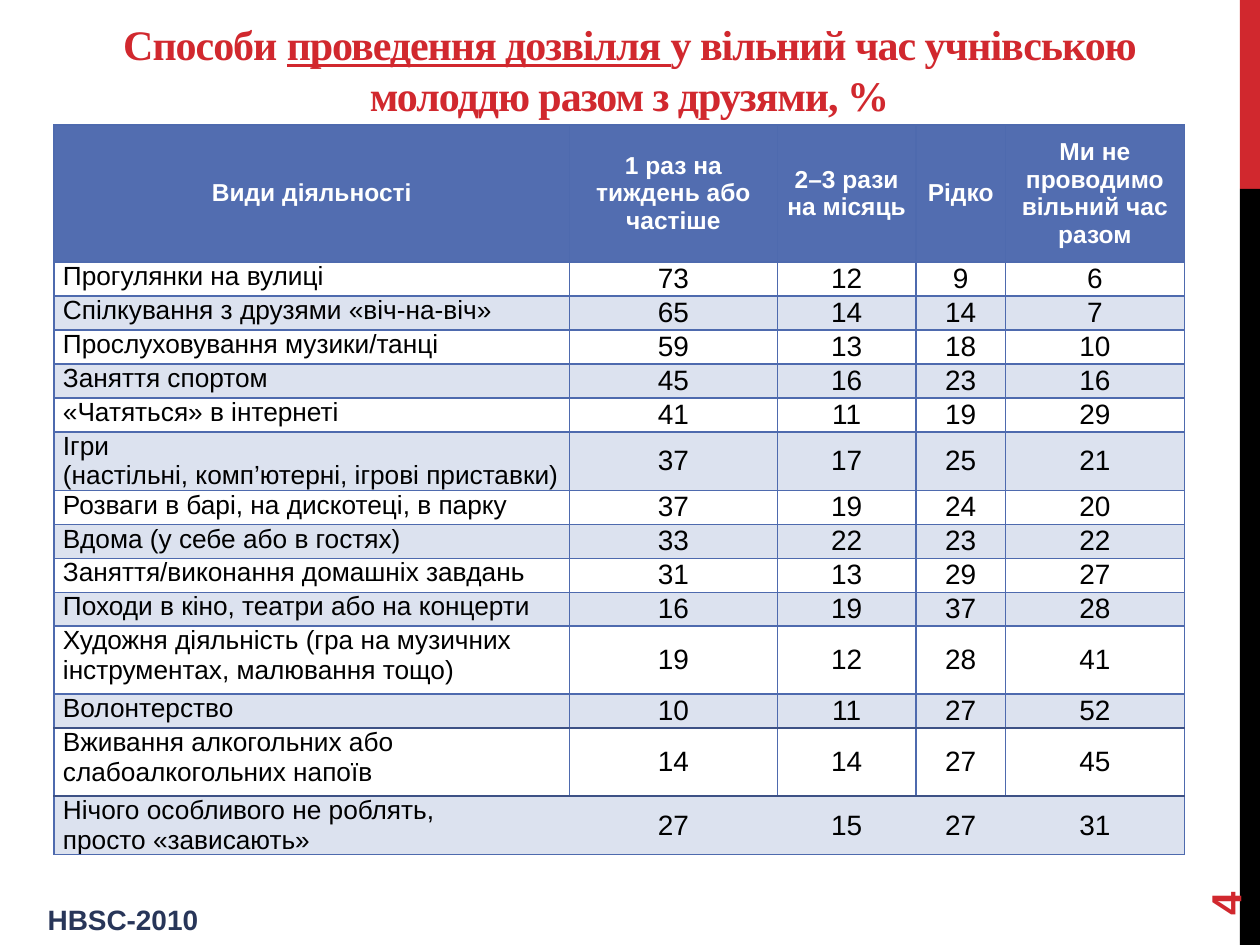
from lxml.etree import SubElement
from pptx import Presentation
from pptx.dml.color import RGBColor
from pptx.enum.shapes import MSO_SHAPE
from pptx.enum.text import MSO_ANCHOR, MSO_AUTO_SIZE, PP_ALIGN
from pptx.oxml.ns import qn
from pptx.util import Inches, Pt

WIDE, HIGH = Inches(10), Inches(7.5)
RED, BLACK, WHITE, NAVY = "D1282E", "000000", "FFFFFF", "283659"
BLUE, PALE, LINE, DARK = "526DB0", "DCE2EF", "4E6AAE", "3D5185"

TITLE = [
    ("Способи ", False),
    ("проведення дозвілля ", True),
    ("у вільний час учнівською молоддю разом з друзями, %", False),
]
HEAD = ["Види діяльності", "1 раз на тиждень або частіше", "2–3 рази на місяць",
        "Рідко", "Ми не проводимо вільний час разом"]
ROWS = [
    ("Прогулянки на вулиці", 73, 12, 9, 6),
    ("Спілкування з друзями «віч-на-віч»", 65, 14, 14, 7),
    ("Прослуховування музики/танці", 59, 13, 18, 10),
    ("Заняття спортом", 45, 16, 23, 16),
    ("«Чатяться» в інтернеті", 41, 11, 19, 29),
    ("Ігри\n(настільні, комп’ютерні, ігрові приставки)", 37, 17, 25, 21),
    ("Розваги в барі, на дискотеці, в парку", 37, 19, 24, 20),
    ("Вдома (у себе або в гостях)", 33, 22, 23, 22),
    ("Заняття/виконання домашніх завдань", 31, 13, 29, 27),
    ("Походи в кіно, театри або на концерти", 16, 19, 37, 28),
    ("Художня діяльність (гра на музичних інструментах, малювання тощо)",
     19, 12, 28, 41),
    ("Волонтерство", 10, 11, 27, 52),
    ("Вживання алкогольних або слабоалкогольних напоїв", 14, 14, 27, 45),
    ("Нічого особливого не роблять,\nпросто «зависають»", 27, 15, 27, 31),
]
LAST = len(ROWS)
COLS = [40.9, 16.5, 11, 7.1, 14.2]
HEAD_ROW, ROW = 14.53, 3.6
TALL = (11, 13)


def color(code):
    return RGBColor.from_string(code)


def across(share):
    """Percent of the slide's width."""
    return int(WIDE * share / 100)


def down(share):
    """Percent of the slide's height."""
    return int(HIGH * share / 100)


def box(left, top, width, height):
    return across(left), down(top), across(width), down(height)


def style(frame, size, code, bold=False, align=PP_ALIGN.LEFT, face="Arial"):
    for para in frame.paragraphs:
        para.alignment = align
        for run in para.runs:
            font = run.font
            font.name, font.size, font.bold = face, Pt(size), bold
            font.color.rgb = color(code)


def add_bar(slide, top, height, code):
    bar = slide.shapes.add_shape(MSO_SHAPE.RECTANGLE, *box(98.4, top, 1.6, height))
    bar.shadow.inherit = False
    bar.fill.solid()
    bar.fill.fore_color.rgb = color(code)
    bar.line.fill.background()


def add_label(slide, text, place, size, code):
    label = slide.shapes.add_textbox(*place)
    frame = label.text_frame
    frame.word_wrap = True
    frame.text = text
    style(frame, size, code, bold=True)
    return label


def set_title(slide):
    title = slide.shapes.title
    title.left, title.top, title.width, title.height = box(5, 2.27, 89.9, 11.07)
    frame = title.text_frame
    frame.auto_size = MSO_AUTO_SIZE.NONE
    frame.vertical_anchor = MSO_ANCHOR.BOTTOM
    for text, under in TITLE:
        run = frame.paragraphs[0].add_run()
        run.text = text
        run.font.underline = under
        run.font._element.set("spc", "-60")
    style(frame, 24, RED, True, PP_ALIGN.CENTER, "Times New Roman")


def set_edges(cell, edges):
    """Draw 1 pt borders; they must come before the fill in the cell's XML."""
    props = cell._tc.get_or_add_tcPr()
    for spot, (side, code) in enumerate(edges.items()):
        line = SubElement(props, qn(f"a:ln{side}"), w=str(Pt(1)))
        if code:
            fill = SubElement(line, qn("a:solidFill"))
            SubElement(fill, qn("a:srgbClr"), val=code)
        else:
            SubElement(line, qn("a:noFill"))
        props.insert(spot, line)


def edges_of(row, col):
    inner = None if row == LAST else LINE
    return {
        "L": LINE if col == 0 else inner,
        "R": LINE if col == len(COLS) - 1 else inner,
        "T": DARK if row >= LAST - 1 else LINE,
        "B": DARK if LAST - 2 <= row < LAST else LINE,
    }


def fill_cell(cell, row, col, text):
    frame = cell.text_frame
    frame.text = str(text)
    cell.margin_left = cell.margin_right = Inches(0.07)
    cell.margin_top = cell.margin_bottom = 0
    name = row > 0 and col == 0
    cell.vertical_anchor = MSO_ANCHOR.TOP if name else MSO_ANCHOR.MIDDLE
    if row == 0:
        style(frame, 14, WHITE, True, PP_ALIGN.CENTER)
    elif name:
        style(frame, 15, BLACK)
    else:
        style(frame, 16, BLACK, align=PP_ALIGN.CENTER)
    if row % 2 and row:
        cell.fill.background()
    else:
        cell.fill.solid()
        cell.fill.fore_color.rgb = color(PALE if row else BLUE)
    set_edges(cell, edges_of(row, col))


def add_grid(slide):
    data = [HEAD, *ROWS]
    place = box(4.3, 13.2, sum(COLS), HEAD_ROW + ROW * (LAST + len(TALL)))
    table = slide.shapes.add_table(len(data), len(COLS), *place).table
    for col, share in zip(table.columns, COLS):
        col.width = across(share)
    for row, texts in enumerate(data):
        share = HEAD_ROW if row == 0 else ROW * (2 if row in TALL else 1)
        table.rows[row].height = down(share)
        for col, text in enumerate(texts):
            fill_cell(table.cell(row, col), row, col, text)


def main():
    deck = Presentation()
    deck.slide_width, deck.slide_height = WIDE, HIGH
    slide = deck.slides.add_slide(deck.slide_layouts[5])
    add_bar(slide, 0, 20, RED)
    add_bar(slide, 20, 80, BLACK)
    set_title(slide)
    add_grid(slide)
    add_label(slide, "HBSC-2010", box(2.8, 94.8, 20.1, 4.93), 16, NAVY)
    number = add_label(slide, "4", box(90, 85.87, 14.4, 5.33), 24, RED)
    number.rotation = 270
    number.text_frame.vertical_anchor = MSO_ANCHOR.MIDDLE
    deck.save("out.pptx")


if __name__ == "__main__":
    main()
